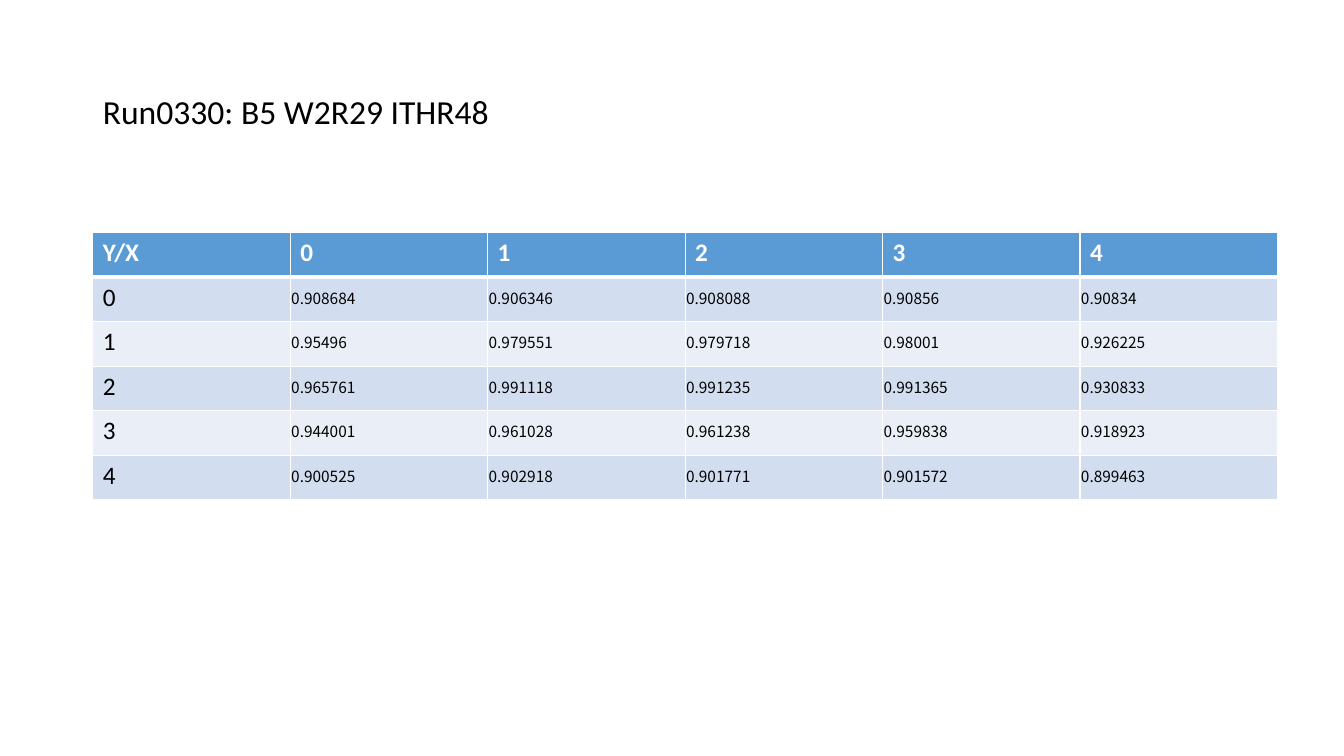
from dataclasses import dataclass

from lxml import etree
from pptx import Presentation
from pptx.dml.color import RGBColor
from pptx.enum.text import MSO_ANCHOR, PP_ALIGN
from pptx.oxml.ns import qn
from pptx.util import Inches, Pt

LEFT = PP_ALIGN.LEFT
TOP, MIDDLE = MSO_ANCHOR.TOP, MSO_ANCHOR.MIDDLE

BLACK = RGBColor(0x00, 0x00, 0x00)
WHITE = RGBColor(0xFF, 0xFF, 0xFF)
HEADER_BLUE = RGBColor(0x5B, 0x9B, 0xD5)
BAND_DARK = RGBColor(0xD2, 0xDE, 0xEF)
BAND_LIGHT = RGBColor(0xEA, 0xEF, 0xF7)

# Values by Y (rows) and X (columns)
VALUES = [
    ["0.908684", "0.906346", "0.908088", "0.90856", "0.90834"],
    ["0.95496", "0.979551", "0.979718", "0.98001", "0.926225"],
    ["0.965761", "0.991118", "0.991235", "0.991365", "0.930833"],
    ["0.944001", "0.961028", "0.961238", "0.959838", "0.918923"],
    ["0.900525", "0.902918", "0.901771", "0.901572", "0.899463"],
]


# Cell styles
@dataclass(frozen=True)
class CellStyle:
    font: dict
    cell: dict


LABEL_MARGINS = {
    "vertical_anchor": TOP,
    "margin_left": Inches(0.1), "margin_right": Inches(0.1),
    "margin_top": Inches(0.05), "margin_bottom": Inches(0.05),
}
VALUE_MARGINS = {
    "vertical_anchor": MIDDLE,
    "margin_left": Inches(0.01), "margin_right": Inches(0.01),
    "margin_top": Inches(0.01), "margin_bottom": Inches(0.05),
}
HEADER = CellStyle({"name": "Calibri", "size": Pt(18), "bold": True}, LABEL_MARGINS)
LABEL = CellStyle({"name": "Calibri", "size": Pt(18), "bold": False}, LABEL_MARGINS)
VALUE = CellStyle({"name": "Noto Sans CJK SC", "size": Pt(11), "bold": False}, VALUE_MARGINS)


def apply(target, formats: dict) -> None:
    for name, value in formats.items():
        setattr(target, name, value)


def add_borders(cell, widths: dict[str, float]) -> None:
    tcPr = cell._tc.get_or_add_tcPr()
    for side, width in widths.items():
        ln = etree.SubElement(tcPr, qn(f"a:ln{side}"), w=str(Pt(width)))
        fill = etree.SubElement(ln, qn("a:solidFill"))
        etree.SubElement(fill, qn("a:srgbClr"), val=str(WHITE))


def fill_cell(cell, text: str, style: CellStyle, row: int) -> None:
    apply(cell, style.cell)
    add_borders(cell, {"L": 1, "R": 1, "T": 3 if row == 1 else 1, "B": 3 if row == 0 else 1})
    cell.fill.solid()
    band = BAND_DARK if row % 2 else BAND_LIGHT
    cell.fill.fore_color.rgb = HEADER_BLUE if row == 0 else band
    r = cell.text_frame.paragraphs[0].add_run()
    r.text = text
    apply(r.font, style.font)
    r.font.color.rgb = WHITE if row == 0 else BLACK


# Title
def add_title(slide, text: str) -> None:
    sp = slide.shapes.title
    apply(sp, {"left": Inches(0.92), "top": Inches(0.4),
               "width": Inches(11.5), "height": Inches(1.45)})
    tf = sp.text_frame
    tf.vertical_anchor = MIDDLE
    p = tf.paragraphs[0]
    apply(p, {"alignment": LEFT, "line_spacing": 0.9})
    r = p.add_run()
    r.text = text
    apply(r.font, {"name": "Calibri", "size": Pt(24)})
    r.font.color.rgb = BLACK


# Table
def add_value_table(slide, values: list[list[str]]) -> None:
    header = ["Y/X"] + [str(x) for x in range(len(values[0]))]
    rows = [header] + [[str(y)] + line for y, line in enumerate(values)]
    table = slide.shapes.add_table(
        len(rows), len(header), Inches(0.92), Inches(2.31), Inches(11.75), Inches(2.65)
    ).table
    for i, line in enumerate(rows):
        for j, text in enumerate(line):
            style = HEADER if i == 0 else LABEL if j == 0 else VALUE
            fill_cell(table.cell(i, j), text, style, i)


def main() -> None:
    prs = Presentation()
    prs.slide_width, prs.slide_height = Inches(13.33), Inches(7.5)
    slide = prs.slides.add_slide(prs.slide_layouts[5])
    add_title(slide, "Run0330: B5 W2R29 ITHR48")
    add_value_table(slide, VALUES)
    prs.save("out.pptx")


if __name__ == "__main__":
    main()
